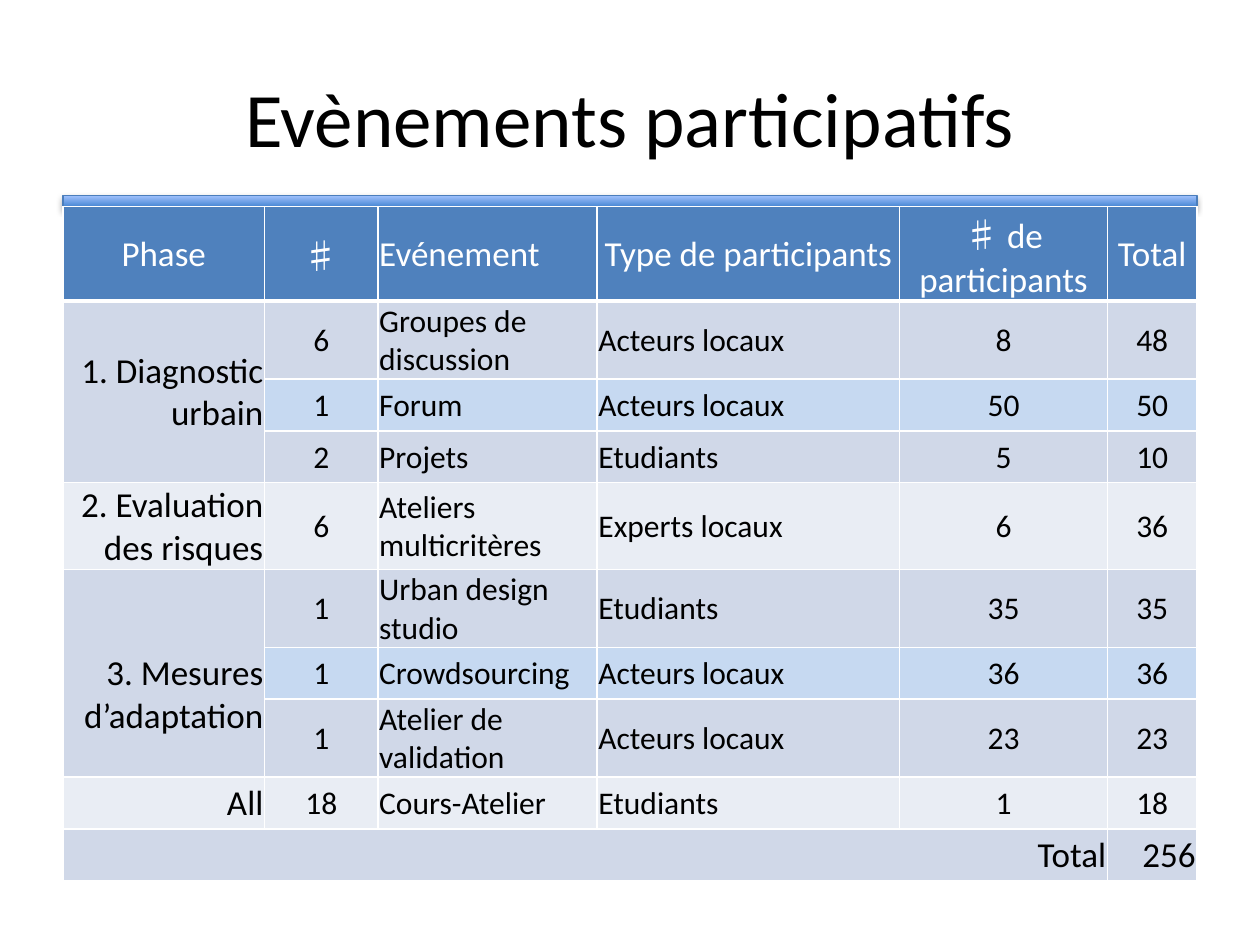
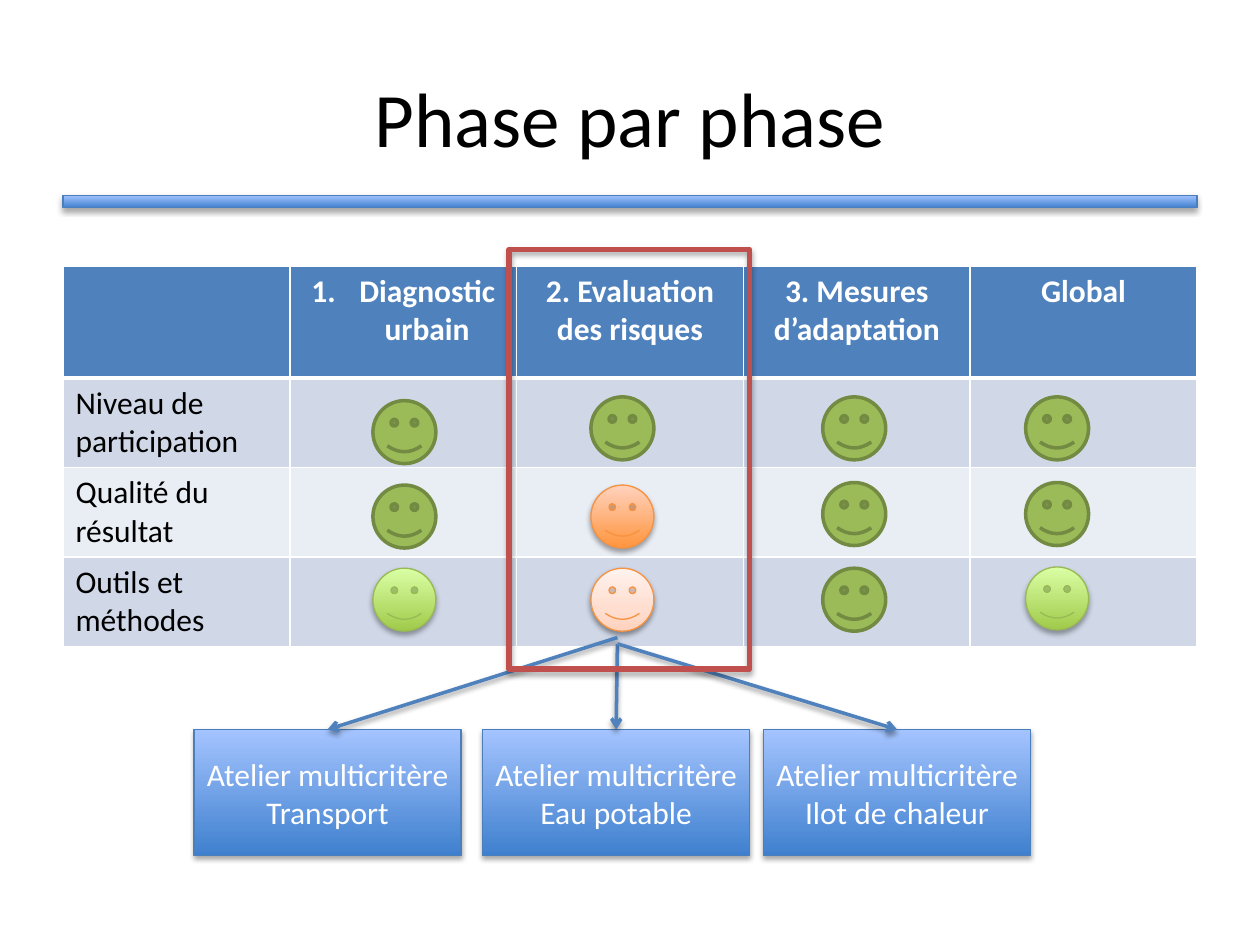
from dataclasses import dataclass
from typing import NamedTuple, Optional

from lxml import etree
from pptx import Presentation
from pptx.dml.color import RGBColor
from pptx.enum import shapes, text
from pptx.oxml import ns, parse_xml
from pptx.util import Inches, Pt

BLACK = RGBColor(0x00, 0x00, 0x00)
WHITE = RGBColor(0xFF, 0xFF, 0xFF)
BLUE = RGBColor(0x4F, 0x81, 0xBD)
BLUE_EDGE = RGBColor(0x4B, 0x7E, 0xBC)
BLUE_DEEP = RGBColor(0x3F, 0x80, 0xCE)
BLUE_LIGHT = RGBColor(0xA4, 0xC4, 0xFF)
BAND_DARK = RGBColor(0xD0, 0xD8, 0xE8)
BAND_LIGHT = RGBColor(0xE9, 0xED, 0xF4)
BAND_BLUE = RGBColor(0xC6, 0xD9, 0xF1)
GREEN = RGBColor(0x9B, 0xBB, 0x59)
GREEN_EDGE = RGBColor(0x73, 0x8A, 0x42)
LIME_EDGE = RGBColor(0x98, 0xB9, 0x55)
LIME_DEEP = RGBColor(0xA0, 0xCA, 0x4A)
LIME_LIGHT = RGBColor(0xDA, 0xFF, 0xA5)
ORANGE_EDGE = RGBColor(0xF6, 0x92, 0x40)
ORANGE_DEEP = RGBColor(0xFF, 0x95, 0x3E)
ORANGE_LIGHT = RGBColor(0xFF, 0xD2, 0xBD)
PEACH = RGBColor(0xFF, 0xDE, 0xD0)
PEACH_LIGHT = RGBColor(0xFF, 0xF2, 0xED)
RED = RGBColor(0xC0, 0x50, 0x4D)

FONT = "Calibri"
SHARP_FONT = "Noto Sans CJK JP"
SHARP = "♯"
LEFT, CENTER, RIGHT = text.PP_ALIGN.LEFT, text.PP_ALIGN.CENTER, text.PP_ALIGN.RIGHT
MIDDLE, TOP = text.MSO_ANCHOR.MIDDLE, text.MSO_ANCHOR.TOP


class Box(NamedTuple):
    left: float
    top: float
    width: float
    height: float

    def emu(self) -> list:
        return [Inches(length) for length in self]


@dataclass(frozen=True)
class Look:
    edge: RGBColor
    weight: float
    stops: tuple = ()
    fill: Optional[RGBColor] = None
    shadow: int = 0


@dataclass(frozen=True)
class Style:
    size: float
    color: RGBColor = BLACK
    align: int = LEFT
    bold: bool = False


class Faces(NamedTuple):
    left: float
    tops: tuple
    looks: tuple


class Workshop(NamedTuple):
    left: float
    topic: str
    arrow_top: float


GLOSSY = Look(BLUE_EDGE, 0.75, ((0, BLUE_DEEP), (100, BLUE_LIGHT)), shadow=35)
GOOD = Look(GREEN_EDGE, 2, fill=GREEN)
FAIR = Look(LIME_EDGE, 0.75, ((0, LIME_DEEP), (100, LIME_LIGHT)), shadow=35)
MIXED = Look(ORANGE_EDGE, 0.75, ((0, ORANGE_DEEP), (100, ORANGE_LIGHT)), shadow=35)
WEAK = Look(ORANGE_EDGE, 0.75, ((0, ORANGE_LIGHT), (35, PEACH), (100, PEACH_LIGHT)), shadow=38)
FOCUS = Look(RED, 3, shadow=35)

EVENT_HEADER = ["Phase", "♯", "Evénement", "Type de participants", "♯ de participants", "Total"]
EVENT_ALIGNS = [RIGHT, CENTER, LEFT, LEFT, CENTER, CENTER]
EVENT_WIDTHS = [1.6, 0.9, 1.74, 2.4, 1.65, 0.71]
EVENT_HEIGHTS = [0.75, 0.62, 0.41, 0.41, 0.69, 0.62, 0.41, 0.62, 0.41, 0.41]
EVENTS = [
    ("1. Diagnostic urbain", "6", "Groupes de discussion", "Acteurs locaux", "8", "48"),
    ("", "1", "Forum", "Acteurs locaux", "50", "50"),
    ("", "2", "Projets", "Etudiants", "5", "10"),
    ("2. Evaluation des risques", "6", "Ateliers multicritères", "Experts locaux", "6", "36"),
    ("3. Mesures d’adaptation", "1", "Urban design studio", "Etudiants", "35", "35"),
    ("", "1", "Crowdsourcing", "Acteurs locaux", "36", "36"),
    ("", "1", "Atelier de validation", "Acteurs locaux", "23", "23"),
    ("All", "18", "Cours-Atelier", "Etudiants", "1", "18"),
    ("Total", "", "", "", "", "256"),
]
EVENT_BANDS = [BAND_DARK, BAND_BLUE, BAND_DARK, BAND_LIGHT, BAND_DARK,
               BAND_BLUE, BAND_DARK, BAND_LIGHT, BAND_DARK]
EVENT_SPANS = [((1, 0), (3, 0)), ((5, 0), (7, 0)), ((9, 0), (9, 4))]

PHASES = ["", "Diagnostic urbain", "2. Evaluation des risques", "3. Mesures d’adaptation", "Global"]
PHASE_HEIGHTS = [0.89, 0.71, 0.71, 0.71]
CRITERIA = ["Niveau de participation", "Qualité du résultat", "Outils et méthodes"]
FACES = [
    Faces(2.96, (3.18, 3.85, 4.51), (GOOD, GOOD, FAIR)),
    Faces(4.69, (3.15, 3.85, 4.51), (GOOD, MIXED, WEAK)),
    Faces(6.53, (3.15, 3.83, 4.51), (GOOD, GOOD, GOOD)),
    Faces(8.14, (3.15, 3.83, 4.5), (GOOD, GOOD, FAIR)),
]
WORKSHOPS = [
    Workshop(1.54, "Transport", 5.06),
    Workshop(3.83, "Eau potable", 5.11),
    Workshop(6.06, "Ilot de chaleur", 5.11),
]


def add_shadow(shape, opacity: int) -> None:
    effects = etree.SubElement(shape._element.spPr, ns.qn("a:effectLst"))
    effects.append(parse_xml(
        f'<a:outerShdw {ns.nsdecls("a")} blurRad="{Pt(3.1)}" dist="{Pt(1.8)}" dir="5400000" '
        f'rotWithShape="0"><a:srgbClr val="000000"><a:alpha val="{opacity * 1000}"/>'
        '</a:srgbClr></a:outerShdw>'))


def add_block(slide, kind: int, box: Box, look: Look):
    shape = slide.shapes.add_shape(kind, *box.emu())
    shape.line.color.rgb = look.edge
    shape.line.width = Pt(look.weight)
    if look.stops:
        stops = "".join(f'<a:gs pos="{pos * 1000}"><a:srgbClr val="{color}"/></a:gs>'
                        for pos, color in look.stops)
        gradient = parse_xml(f'<a:gradFill {ns.nsdecls("a")} rotWithShape="1"><a:gsLst>{stops}'
                             '</a:gsLst><a:lin ang="16200000" scaled="0"/></a:gradFill>')
        shape._element.spPr.find(ns.qn("a:prstGeom")).addnext(gradient)
    elif look.fill is not None:
        shape.fill.solid()
        shape.fill.fore_color.rgb = look.fill
    else:
        shape.fill.background()
    if look.shadow:
        add_shadow(shape, look.shadow)
    else:
        shape.shadow.inherit = False
    return shape


def add_run(paragraph, words: str, style: Style, font: str = FONT) -> None:
    paragraph.alignment = style.align
    run = paragraph.add_run()
    run.text = words
    run.font.name = font
    run.font.size = Pt(style.size)
    run.font.bold = style.bold
    run.font.color.rgb = style.color
    if font != FONT:
        etree.SubElement(run.font._element, ns.qn("a:ea"), typeface=font)


def add_titled_slide(deck, title: str):
    slide = deck.slides.add_slide(deck.slide_layouts[6])
    add_block(slide, shapes.MSO_SHAPE.RECTANGLE, Box(0.5, 1.55, 9, 0.1), GLOSSY)
    frame = slide.shapes.add_textbox(*Box(0.5, 0.3, 9, 1.25).emu()).text_frame
    frame.word_wrap = True
    frame.vertical_anchor = MIDDLE
    add_run(frame.paragraphs[0], title, Style(44, align=CENTER))
    return slide


def add_grid(slide, top: float, widths: list, heights: list, bands: list):
    box = Box(0.5, top, sum(widths), sum(heights))
    table = slide.shapes.add_table(len(heights), len(widths), *box.emu()).table
    table.horz_banding = False
    for column, width in zip(table.columns, widths):
        column.width = Inches(width)
    for index, (row, height, band) in enumerate(zip(table.rows, heights, bands)):
        row.height = Inches(height)
        weights = {"L": 1, "R": 1, "T": 3 if index == 1 else 1, "B": 3 if index == 0 else 1}
        for cell in row.cells:
            properties = cell._tc.get_or_add_tcPr()
            for side, weight in weights.items():
                properties.append(parse_xml(
                    f'<a:ln{side} {ns.nsdecls("a")} w="{Pt(weight)}"><a:solidFill>'
                    f'<a:srgbClr val="{WHITE}"/></a:solidFill></a:ln{side}>'))
            cell.fill.solid()
            cell.fill.fore_color.rgb = band
    return table


def fill_cell(cell, words: str, style: Style, anchor: int = TOP) -> None:
    cell.vertical_anchor = anchor
    paragraph = cell.text_frame.paragraphs[0]
    if words.startswith(SHARP):
        sign, words = words[:2], words[2:]
        add_run(paragraph, sign, style, SHARP_FONT)
    if words:
        add_run(paragraph, words, style)


def build_events(deck) -> None:
    slide = add_titled_slide(deck, "Evènements participatifs")
    table = add_grid(slide, 1.64, EVENT_WIDTHS, EVENT_HEIGHTS, [BLUE] + EVENT_BANDS)
    for start, end in EVENT_SPANS:
        table.cell(*start).merge(table.cell(*end))
    last = len(EVENTS)
    for r, row in enumerate([EVENT_HEADER, *EVENTS]):
        for c, words in enumerate(row):
            if not words:
                continue
            if r == 0:
                style = Style(20, WHITE, LEFT if c == 2 else CENTER)
            elif r == last:
                style = Style(20, align=RIGHT)
            else:
                style = Style(20 if c == 0 else 18, align=EVENT_ALIGNS[c])
            cell = table.cell(r, c)
            cell.margin_left = cell.margin_right = cell.margin_top = Inches(0.01)
            cell.margin_bottom = 0
            fill_cell(cell, words, style, MIDDLE)
    table.cell(5, 0).margin_top = Inches(0.35)


def build_phases(deck) -> None:
    slide = add_titled_slide(deck, "Phase par phase")
    table = add_grid(slide, 2.11, [1.8] * 5, PHASE_HEIGHTS,
                     [BLUE, BAND_DARK, BAND_LIGHT, BAND_DARK])
    numbered = table.cell(0, 1).text_frame.paragraphs[0]._p.get_or_add_pPr()
    numbered.set("marL", str(Inches(0.38)))
    numbered.set("indent", str(-Inches(0.38)))
    etree.SubElement(numbered, ns.qn("a:buFont"), typeface="+mj-lt")
    etree.SubElement(numbered, ns.qn("a:buAutoNum"), type="arabicPeriod")
    for c, phase in enumerate(PHASES):
        fill_cell(table.cell(0, c), phase, Style(18, WHITE, CENTER, True))
    for r, criterion in enumerate(CRITERIA, 1):
        fill_cell(table.cell(r, 0), criterion, Style(18))

    for column in FACES:
        for top, look in zip(column.tops, column.looks):
            add_block(slide, shapes.MSO_SHAPE.SMILEY_FACE, Box(column.left, top, 0.5, 0.5), look)

    blocks = [add_workshop(slide, workshop) for workshop in WORKSHOPS]
    for workshop, block in zip(WORKSHOPS, blocks):
        add_arrow(slide, workshop, block)
    add_block(slide, shapes.MSO_SHAPE.RECTANGLE, Box(4.04, 1.98, 1.91, 3.33), FOCUS)


def add_workshop(slide, workshop: Workshop):
    block = add_block(slide, shapes.MSO_SHAPE.RECTANGLE, Box(workshop.left, 5.79, 2.12, 1), GLOSSY)
    frame = block.text_frame
    frame.word_wrap = True
    frame.vertical_anchor = MIDDLE
    style = Style(18, WHITE, CENTER)
    add_run(frame.paragraphs[0], "Atelier multicritère", style)
    add_run(frame.add_paragraph(), workshop.topic, style)
    return block


def add_arrow(slide, workshop: Workshop, block) -> None:
    arrow = slide.shapes.add_connector(
        shapes.MSO_CONNECTOR.STRAIGHT, Inches(4.9), Inches(workshop.arrow_top),
        Inches(workshop.left + 1.06), Inches(5.79))
    arrow.end_connect(block, 0)
    arrow.line.color.rgb = BLUE
    arrow.line.width = Pt(2)
    etree.SubElement(arrow.line._get_or_add_ln(), ns.qn("a:tailEnd"), type="arrow")
    add_shadow(arrow, 38)


def main() -> None:
    deck = Presentation()
    deck.slide_width, deck.slide_height = Inches(10), Inches(7.5)
    build_events(deck)
    build_phases(deck)
    deck.save("out.pptx")


if __name__ == "__main__":
    main()
